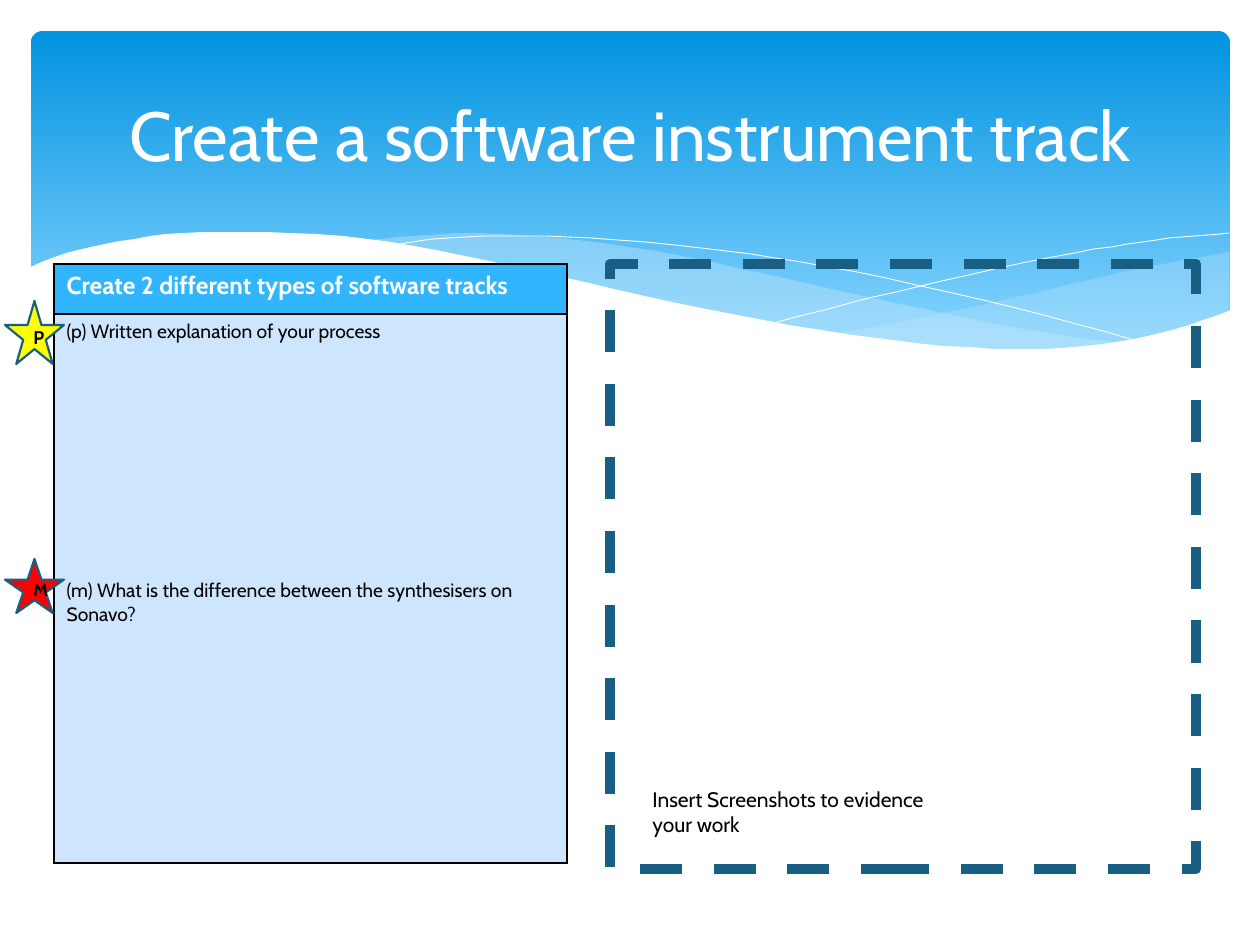
"""Build the slide about creating a software instrument track."""
from lxml.etree import SubElement
from pptx import Presentation
from pptx.dml.color import RGBColor
from pptx.enum.dml import MSO_LINE
from pptx.enum.shapes import MSO_SHAPE as SHAPE
from pptx.enum.text import MSO_ANCHOR as ANCHOR, PP_ALIGN as ALIGN
from pptx.oxml import parse_xml
from pptx.oxml.ns import nsdecls, qn
from pptx.util import Emu, Pt

PX = 914400 / 126
FONT = "Cabin"
WHITE = RGBColor(0xFF, 0xFF, 0xFF)
BLACK = RGBColor(0x00, 0x00, 0x00)
SKY_TOP = RGBColor(0x02, 0x93, 0xE0)
SKY_BOTTOM = RGBColor(0x83, 0xD3, 0xFE)
VEIL = RGBColor(0xC6, 0xE7, 0xFC)
OUTLINE = RGBColor(0x19, 0x5F, 0x84)
HEADING = RGBColor(0x31, 0xB6, 0xFD)
PANEL = RGBColor(0xCE, 0xE5, 0xFE)
RED = RGBColor(0xFF, 0x00, 0x00)
YELLOW = RGBColor(0xFF, 0xFF, 0x00)

deck = Presentation()
deck.slide_width, deck.slide_height = Emu(round(1260 * PX)), Emu(round(945 * PX))
slide = deck.slides.add_slide(deck.slide_layouts[6])
shapes = slide.shapes


def box(*lengths):
    return [Emu(round(length * PX)) for length in lengths]


def style(paragraph, size, color, bold=False):
    for run in paragraph.runs:
        run.font.name, run.font.size, run.font.bold = FONT, Pt(size), bold
        run.font.color.rgb = color


banner = shapes.add_shape(SHAPE.ROUNDED_RECTANGLE, *box(31, 31, 1199, 340))
banner.adjustments[0] = 0.034
banner.shadow.inherit = False
banner.line.fill.background()
banner.fill.gradient()
banner.fill.gradient_angle = 270
for stop, color, position in zip(banner.fill.gradient_stops, (SKY_TOP, SKY_BOTTOM), (0, 0.9)):
    stop.color.rgb, stop.position = color, position

right_veil = [
    [(1229, 252), (1142, 268), (1085, 281), (982, 305), (890, 324), (833, 334)],
    [(833, 334), (922, 345), (1012, 350), (1099, 345), (1169, 331), (1229, 311)],
]
middle_veil = [
    [(1125, 344), (1017, 328), (890, 302), (793, 280), (682, 256), (586, 241),
     (479, 233), (413, 236), (360, 241)],
    [(360, 241), (456, 256), (566, 280), (713, 312), (819, 333), (910, 345),
     (1017, 350), (1080, 349), (1125, 344)],
]
falling_line = [[(389, 246), (433, 239), (505, 236), (591, 238), (701, 248),
                 (801, 262), (916, 285), (1047, 316), (1143, 343)]]
rising_line = [[(772, 324), (847, 304), (942, 281), (1053, 257), (1128, 244),
                (1182, 237), (1229, 233)]]
white_wave = [
    [(1231, 310), (1172, 330), (1103, 344), (1019, 349), (915, 343), (789, 325),
     (667, 301), (563, 277), (460, 255), (368, 239), (266, 232), (184, 233),
     (120, 241), (66, 253), (29, 268)],
    [(29, 415), (1231, 415)],
]
waves = [
    (right_veil, VEIL, 29),
    (middle_veil, VEIL, 40),
    (falling_line, None, 100),
    (rising_line, None, 100),
    (white_wave, WHITE, 100),
]
for curves, color, opacity in waves:
    outline = []
    for curve in curves:
        ends = [curve[0], *curve, curve[-1]]
        for a, b, c, d in zip(ends, ends[1:], ends[2:], ends[3:]):
            for t in (0, 0.25, 0.5, 0.75):
                outline.append([
                    (2 * q + (r - p) * t + (2 * p - 5 * q + 4 * r - s) * t**2
                     + (3 * q - p - 3 * r + s) * t**3) / 2
                    for p, q, r, s in zip(a, b, c, d)
                ])
        outline.append(curve[-1])
    builder = shapes.build_freeform(*outline[0], scale=PX)
    builder.add_line_segments(outline[1:], close=color is not None)
    wave = builder.convert_to_shape()
    wave.shadow.inherit = False
    if color is None:
        wave.fill.background()
        wave.line.color.rgb, wave.line.width = WHITE, Pt(0.5)
    else:
        wave.fill.solid()
        wave.fill.fore_color.rgb = color
        wave.line.fill.background()
        if opacity < 100:
            tint = wave.fill._xPr.find(qn("a:solidFill"))[0]
            SubElement(tint, qn("a:alpha")).set("val", str(opacity * 1000))

title = shapes.add_textbox(*box(63, 47, 1134, 173)).text_frame
title.word_wrap = True
title.vertical_anchor = ANCHOR.MIDDLE
title.text = "Create a software instrument track"
title.paragraphs[0].alignment = ALIGN.CENTER
style(title.paragraphs[0], 39.6, WHITE)

evidence_area = shapes.add_shape(SHAPE.RECTANGLE, *box(610, 264, 586, 605))
evidence_area.shadow.inherit = False
evidence_area.fill.background()
evidence_area.line.color.rgb, evidence_area.line.width = OUTLINE, Pt(6)
evidence_area.line.dash_style = MSO_LINE.DASH

evidence_hint = shapes.add_textbox(*box(640, 780, 297, 63)).text_frame
evidence_hint.word_wrap = True
evidence_hint.text = "Insert Screenshots to evidence your work"
style(evidence_hint.paragraphs[0], 12, BLACK)

tasks = shapes.add_table(2, 1, *box(54, 264, 513, 599)).table
tasks.rows[0].height, tasks.rows[1].height = box(50, 549)
heading, questions = tasks.cell(0, 0), tasks.cell(1, 0)
heading.text_frame.text = "Create 2 different types of software tracks"
style(heading.text_frame.paragraphs[0], 14, WHITE, bold=True)
questions.text_frame.text = "(p) Written explanation of your process"
merit = questions.text_frame.add_paragraph()
merit.text = "(m) What is the difference between the synthesisers on Sonavo?"
merit.space_before = Pt(134.5)
for question in questions.text_frame.paragraphs:
    style(question, 11, BLACK)
for cell, color in ((heading, HEADING), (questions, PANEL)):
    for side in ("lnL", "lnR", "lnT", "lnB"):
        cell._tc.get_or_add_tcPr().append(parse_xml(
            f'<a:{side} {nsdecls("a")} w="12700"><a:solidFill>'
            f'<a:srgbClr val="{BLACK}"/></a:solidFill></a:{side}>'))
    cell.fill.solid()
    cell.fill.fore_color.rgb = color

grades = [("M", 559, 54, RED, 10), ("P", 301, 63, YELLOW, 10.5)]
for letter, top, height, color, size in grades:
    star = shapes.add_shape(SHAPE.STAR_5_POINT, *box(5, top, 59, height))
    star.shadow.inherit = False
    star.fill.solid()
    star.fill.fore_color.rgb = color
    star.line.color.rgb, star.line.width = OUTLINE, Pt(1.25)
    star.text_frame.text = letter
    star.text_frame.vertical_anchor = ANCHOR.MIDDLE
    star.text_frame.paragraphs[0].alignment = ALIGN.CENTER
    style(star.text_frame.paragraphs[0], size, BLACK, bold=True)

deck.save("out.pptx")
